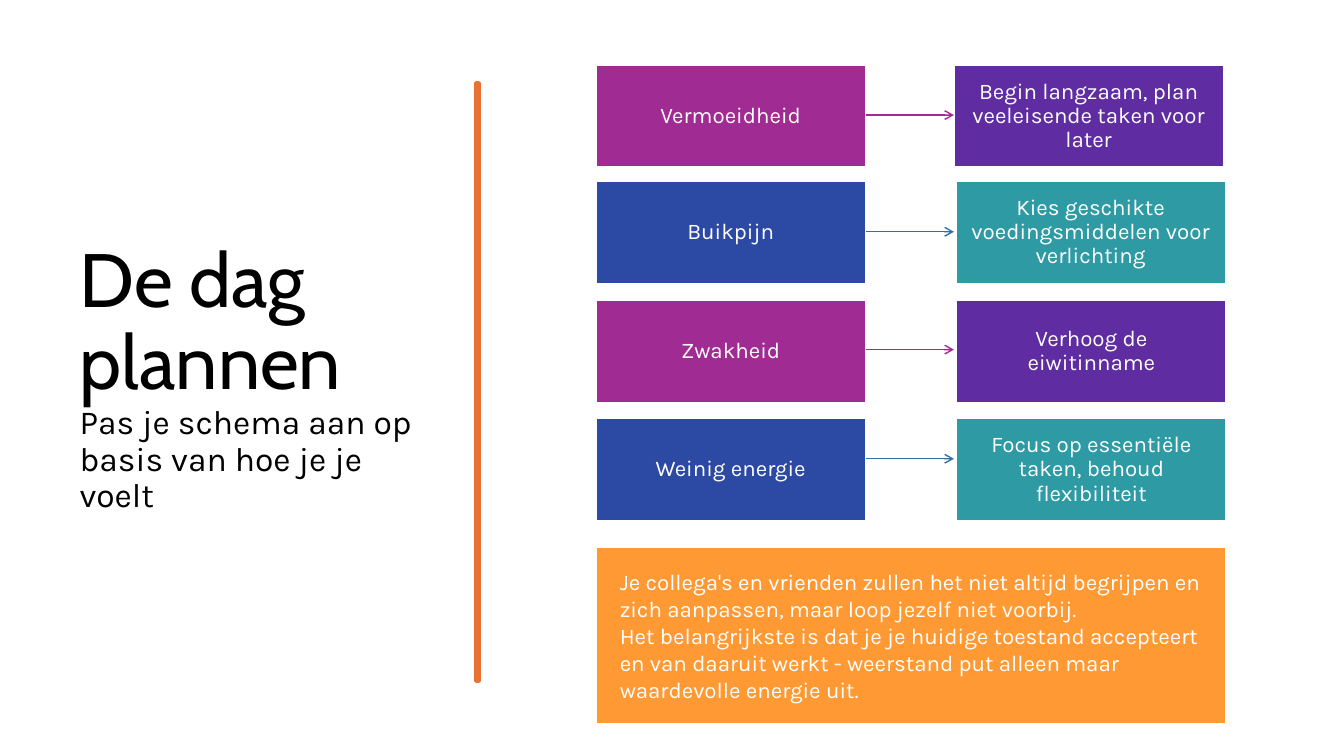
from lxml import etree
from pptx import Presentation
from pptx.dml.color import RGBColor
from pptx.enum import shapes, text
from pptx.oxml import ns
from pptx.util import Cm, Pt

WHITE = RGBColor(0xFF, 0xFF, 0xFF)
BLACK = RGBColor(0x00, 0x00, 0x00)
MAGENTA = RGBColor(0xA0, 0x2B, 0x93)
PURPLE = RGBColor(0x5F, 0x2C, 0xA1)
BLUE = RGBColor(0x2C, 0x49, 0xA3)
TEAL = RGBColor(0x2D, 0x9A, 0xA4)
STEEL = RGBColor(0x2C, 0x71, 0xA4)
RUST = RGBColor(0xE9, 0x71, 0x32)
ORANGE = RGBColor(0xFF, 0x99, 0x33)

TITLE = "De dag plannen"
SUBTITLE = "Pas je schema aan op basis van hoe je je voelt"
ROWS = [
    ("Vermoeidheid", "Begin langzaam, plan veeleisende taken voor later", 1.63, 24.03, 2.9),
    ("Buikpijn", "Kies geschikte voedingsmiddelen voor verlichting", 4.56, 24.08, 5.84),
    ("Zwakheid", "Verhoog de eiwitinname", 7.56, 24.1, 8.81),
    ("Weinig energie", "Focus op essentiële taken, behoud flexibiliteit", 10.54, 24.1, 11.56),
]
SCHEMES = [(MAGENTA, PURPLE, MAGENTA), (BLUE, TEAL, STEEL)]
ADVICE = [
    "Je collega's en vrienden zullen het niet altijd begrijpen en zich aanpassen, "
    "maar loop jezelf niet voorbij.",
    "Het belangrijkste is dat je je huidige toestand accepteert en van daaruit werkt - "
    "weerstand put alleen maar waardevolle energie uit.",
]
LEFT, BOX_W, BOX_H = 15.01, 6.81, 2.59
ARROW_X1, ARROW_X2 = 21.83, 24.04


def style_run(r, size, font, color):
    r.font.size, r.font.name = Pt(size), font
    r.font.color.rgb = color


def add_rect(s, x, y, w, h, fill, line, width):
    sp = s.shapes.add_shape(shapes.MSO_SHAPE.RECTANGLE, Cm(x), Cm(y), Cm(w), Cm(h))
    sp.shadow.inherit = False
    sp.fill.solid()
    sp.fill.fore_color.rgb = fill
    sp.line.color.rgb = line
    sp.line.width = Pt(width)
    return sp


def add_box(s, x, y, w, h, fill, lines, align, inset=0.33):
    sp = add_rect(s, x, y, w, h, fill, WHITE, 1.5)
    tf = sp.text_frame
    tf.text = "\n".join(lines)
    tf.word_wrap = True
    tf.vertical_anchor = text.MSO_ANCHOR.MIDDLE
    tf.margin_left, tf.margin_right = Cm(inset), Cm(0.33)
    tf.margin_top = tf.margin_bottom = Cm(0.36)
    for p in tf.paragraphs:
        p.alignment = align
        style_run(p.runs[0], 16, "Karla", WHITE)
    return tf


def add_arrow(s, y, color):
    sp = s.shapes.add_connector(
        shapes.MSO_CONNECTOR.STRAIGHT, Cm(ARROW_X1), Cm(y), Cm(ARROW_X2), Cm(y))
    sp.line.color.rgb = color
    sp.line.width = Pt(1)
    etree.SubElement(sp.line._get_or_add_ln(), ns.qn("a:tailEnd"), type="arrow")
    etree.SubElement(sp._element.spPr, ns.qn("a:effectLst"))


def add_title(s):
    sp = s.shapes.title
    sp.left, sp.top, sp.width, sp.height = Cm(1.75), Cm(1.78), Cm(9.5), Cm(15.52)
    tf = sp.text_frame
    tf.text = TITLE + "\v" + SUBTITLE
    tf.word_wrap = True
    tf.auto_size = text.MSO_AUTO_SIZE.NONE
    tf.vertical_anchor = text.MSO_ANCHOR.MIDDLE
    p = tf.paragraphs[0]
    p.alignment = text.PP_ALIGN.LEFT
    p.line_spacing = 0.9
    for r, size, font in zip(p.runs, (54, 24), ("Cabin", "Karla")):
        style_run(r, size, font, BLACK)


def main():
    prs = Presentation()
    prs.slide_width, prs.slide_height = Cm(33.87), Cm(19.05)
    s = prs.slides.add_slide(prs.slide_layouts[5])
    add_title(s)
    add_rect(s, 12.01, 2.11, 0.05, 15.04, RUST, RUST, 3.25)

    for i, (symptom, tip, top, right, arrow_y) in enumerate(ROWS):
        symptom_fill, tip_fill, arrow_color = SCHEMES[i % len(SCHEMES)]
        for label, x, fill in ((symptom, LEFT, symptom_fill), (tip, right, tip_fill)):
            tf = add_box(s, x, top, BOX_W, BOX_H, fill, [label], text.PP_ALIGN.CENTER)
            p = tf.paragraphs[0]
            p.line_spacing = 0.9
            p.space_after = Pt(7)
        add_arrow(s, arrow_y, arrow_color)

    add_box(s, LEFT, 13.79, 15.9, 4.45, ORANGE, ADVICE, text.PP_ALIGN.LEFT, inset=0.61)
    prs.save("out.pptx")


if __name__ == "__main__":
    main()
